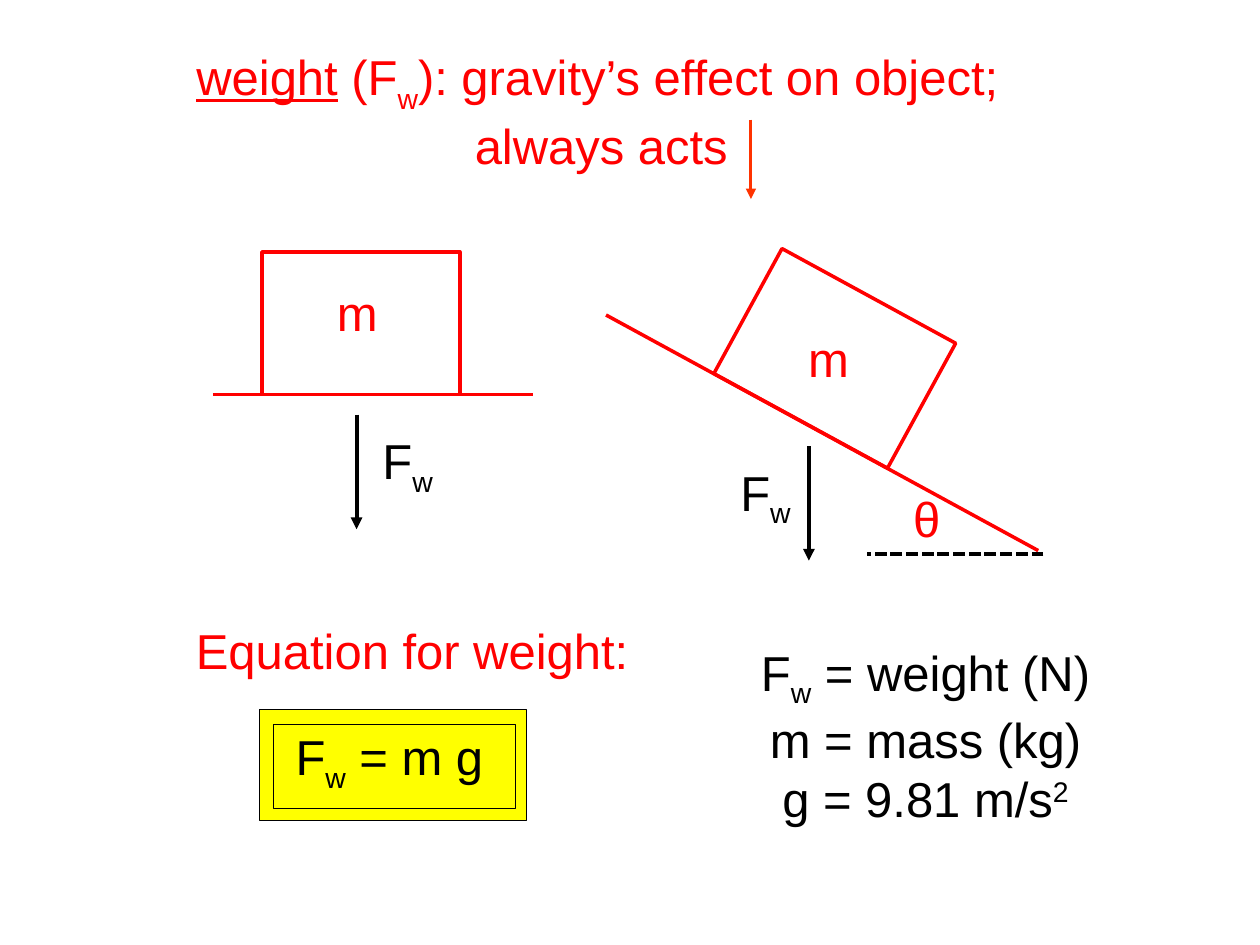
from lxml import etree
from pptx import Presentation
from pptx.dml.color import RGBColor
from pptx.enum.dml import MSO_LINE
from pptx.enum.shapes import MSO_CONNECTOR, MSO_SHAPE
from pptx.enum.text import MSO_ANCHOR, PP_ALIGN
from pptx.oxml.ns import qn
from pptx.util import Inches, Pt

STRAIGHT = MSO_CONNECTOR.STRAIGHT
RECT = MSO_SHAPE.RECTANGLE
DASH = MSO_LINE.SQUARE_DOT
TOP, MIDDLE = MSO_ANCHOR.TOP, MSO_ANCHOR.MIDDLE
LEFT, CENTER = PP_ALIGN.LEFT, PP_ALIGN.CENTER
RED, ORANGE, BLACK, YELLOW = "FF0000", "FF3300", "000000", "FFFF00"
FORCE = [("F", 0), ("w", -25)]


def rgb(value):
    return RGBColor.from_string(value)


def add_text(s, box, paragraphs, color, anchor=TOP, align=CENTER, wrap=True):
    tb = s.shapes.add_textbox(*map(Inches, box))
    tf = tb.text_frame
    tf.word_wrap = wrap
    tf.vertical_anchor = anchor
    for i, runs in enumerate(paragraphs):
        p = tf.paragraphs[0] if i == 0 else tf.add_paragraph()
        p.alignment = align
        p.font.name = "Arial"
        p.font.size = Pt(28)
        p.font.color.rgb = rgb(color)
        for text, baseline in runs:
            r = p.add_run()
            r.text = text
            r.font.name = "Arial"
            r.font.size = Pt(28)
            r.font.color.rgb = rgb(color)
            if baseline:
                r.font._element.set("baseline", str(baseline * 1000))
    return tf


def add_rect(s, box, line, width, fill=None, rotation=0):
    sp = s.shapes.add_shape(RECT, *map(Inches, box))
    sp.shadow.inherit = False
    sp.rotation = rotation
    sp.line.color.rgb = rgb(line)
    sp.line.width = Pt(width)
    if fill:
        sp.fill.solid()
        sp.fill.fore_color.rgb = rgb(fill)
    else:
        sp.fill.background()


def add_line(s, start, end, color, width, arrow=False, dash=None):
    c = s.shapes.add_connector(STRAIGHT, *map(Inches, start + end))
    c.line.color.rgb = rgb(color)
    c.line.width = Pt(width)
    if dash:
        c.line.dash_style = dash
    if arrow:
        ln = c.line._get_or_add_ln()
        etree.SubElement(ln, qn("a:tailEnd"), type="triangle")
    etree.SubElement(c._element.spPr, qn("a:effectLst"))


def add_label(s, left, top, text):
    add_text(s, (left, top, 1.51, 0.75), [[(text, 0)]], RED)


def add_force(s, x, top, label_left):
    add_text(s, (label_left, top + 0.08, 0.81, 0.75), [FORCE], BLACK)
    add_line(s, (x, top), (x, top + 0.91), BLACK, 2.25, arrow=True)


def add_title(s):
    add_line(s, (5.96, 0.95), (5.96, 1.58), ORANGE, 1.75, arrow=True)
    tf = add_text(s, (1.46, 0.36, 6.62, 1.03), [
        [("weight", 0), (" (F", 0), ("w", -30),
         ("): gravity’s effect on object;", 0)],
        [("always acts", 0)],
    ], RED, MIDDLE, LEFT, wrap=False)
    first, second = tf.paragraphs
    first.runs[0].font.underline = True
    second._p.get_or_add_pPr().set("marL", str(Inches(2.21)))


def add_flat_block(s):
    add_rect(s, (2.08, 2, 1.57, 1.13), RED, 2)
    add_label(s, 2.08, 2.19, "m")
    add_line(s, (1.69, 3.13), (4.23, 3.13), RED, 2)
    add_force(s, 2.83, 3.29, 2.83)


def add_inclined_block(s):
    add_label(s, 5.82, 2.56, "m")
    add_rect(s, (5.84, 2.28, 1.57, 1.13), RED, 2, rotation=28.6)
    add_line(s, (4.81, 2.5), (8.24, 4.37), RED, 2)
    add_label(s, 6.6, 3.83, "θ")
    add_line(s, (8.28, 4.4), (6.88, 4.4), BLACK, 2.25, dash=DASH)
    add_force(s, 6.42, 3.54, 5.67)


def add_equation(s):
    add_text(s, (0.98, 4.87, 4.58, 0.57), [[("Equation for weight:", 0)]],
             RED, MIDDLE)
    for box in ((2.06, 5.63, 2.12, 0.88), (2.17, 5.75, 1.92, 0.67)):
        add_rect(s, box, BLACK, 0.75, YELLOW)
    add_text(s, (2.23, 5.75, 1.72, 0.57), [FORCE + [(" = m g", 0)]],
             BLACK, MIDDLE, wrap=False)
    add_text(s, (5.92, 5.08, 2.85, 1.5), [
        FORCE + [(" = weight (N)", 0)],
        [("m = mass (kg)", 0)],
        [("g = 9.81 m/s", 0), ("2", 30)],
    ], BLACK, MIDDLE, wrap=False)


def main():
    prs = Presentation()
    prs.slide_width, prs.slide_height = Inches(10), Inches(7.5)
    s = prs.slides.add_slide(prs.slide_layouts[6])
    add_title(s)
    add_flat_block(s)
    add_inclined_block(s)
    add_equation(s)
    prs.save("out.pptx")


if __name__ == "__main__":
    main()
